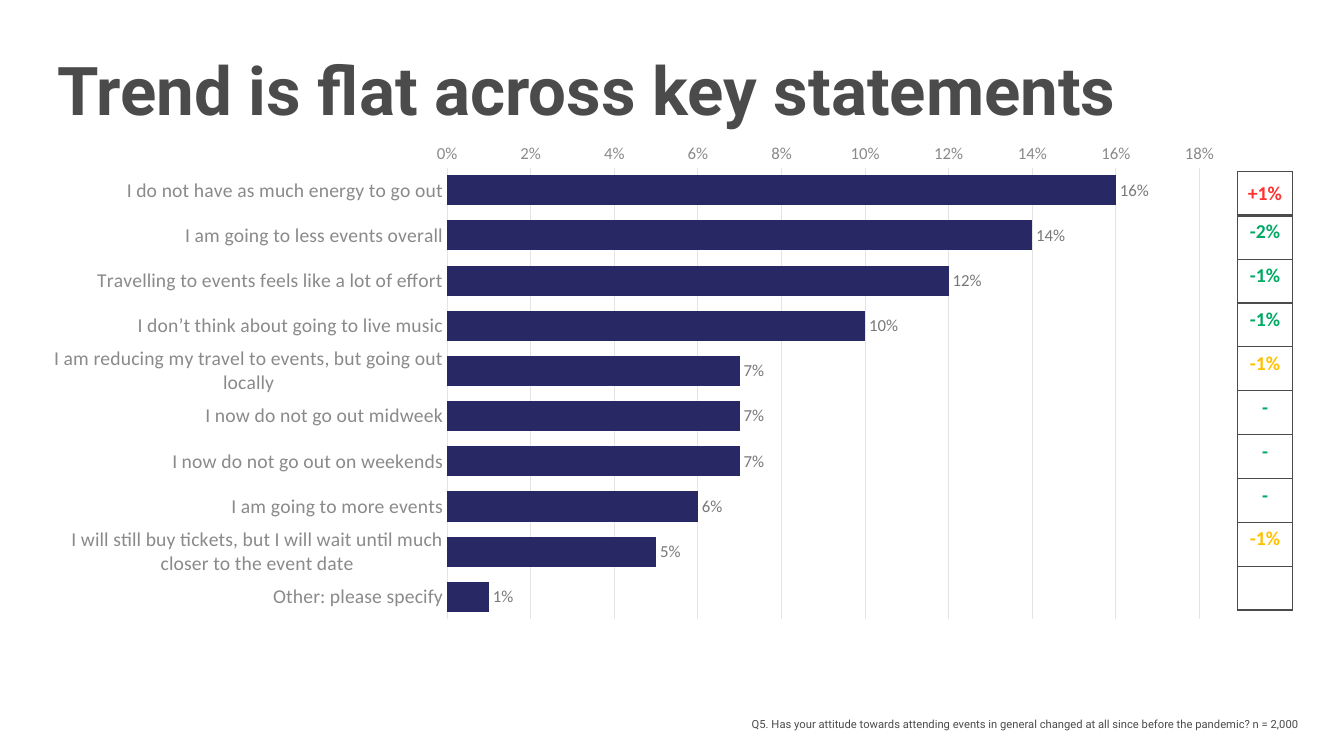
from dataclasses import dataclass

from lxml import etree
from pptx import Presentation
from pptx import util as u
from pptx.chart import data as chart_data
from pptx.dml.color import RGBColor
from pptx.enum import chart as charts, text
from pptx.oxml import ns

GREY = RGBColor(0x4B, 0x4B, 0x4B)
AXIS_GREY = RGBColor(0x8A, 0x8A, 0x8A)
LABEL_GREY = RGBColor(0x78, 0x78, 0x78)
GRID_GREY = RGBColor(0xE4, 0xE4, 0xE4)
NAVY = RGBColor(0x28, 0x28, 0x64)
RED = RGBColor(0xFF, 0x32, 0x32)
GREEN = RGBColor(0x00, 0xAA, 0x64)
AMBER = RGBColor(0xFF, 0xC0, 0x00)
WHITE = RGBColor(0xFF, 0xFF, 0xFF)


@dataclass
class Statement:
    label: str
    share: float
    change: str
    change_color: RGBColor


STATEMENTS = [
    Statement("I do not have as much energy to go out", 0.16, "+1%", RED),
    Statement("I am going to less events overall", 0.14, "-2%", GREEN),
    Statement("Travelling to events feels like a lot of effort", 0.12, "-1%", GREEN),
    Statement("I don’t think about going to live music", 0.10, "-1%", GREEN),
    Statement("I am reducing my travel to events, but going out locally", 0.07, "-1%", AMBER),
    Statement("I now do not go out midweek", 0.07, "-", GREEN),
    Statement("I now do not go out on weekends", 0.07, "-", GREEN),
    Statement("I am going to more events", 0.06, "-", GREEN),
    Statement("I will still buy tickets, but I will wait until much closer to the event date",
              0.05, "-1%", AMBER),
    Statement("Other: please specify", 0.01, "", GREY),
]


def style_font(font, size: float, color: RGBColor, name: str = "Calibri",
               bold: bool = False) -> None:
    font.size, font.name, font.bold = u.Pt(size), name, bold
    font.color.rgb = color


def write_text(frame, content: str, *, size: float, color: RGBColor, name: str = "Calibri",
               bold: bool = False, align=text.PP_ALIGN.LEFT) -> None:
    paragraph = frame.paragraphs[0]
    paragraph.alignment = align
    if content:
        run = paragraph.add_run()
        run.text = content
        style_font(run.font, size, color, name, bold)


def add_text_box(slide, left: float, top: float, width: float, height: float,
                 content: str, **text_format) -> None:
    frame = slide.shapes.add_textbox(u.Cm(left), u.Cm(top), u.Cm(width), u.Cm(height)).text_frame
    frame.word_wrap = True
    frame.auto_size = text.MSO_AUTO_SIZE.SHAPE_TO_FIT_TEXT
    write_text(frame, content, name="Roboto", color=GREY, **text_format)


def add_borders(cell, bottom_width: float) -> None:
    properties = cell._tc.get_or_add_tcPr()
    for side in "LRTB":
        width = bottom_width if side == "B" else 1
        line = etree.SubElement(properties, ns.qn(f"a:ln{side}"), w=str(u.Pt(width)))
        fill = etree.SubElement(line, ns.qn("a:solidFill"))
        etree.SubElement(fill, ns.qn("a:srgbClr"), val=str(GREY))


def add_change_table(slide) -> None:
    table = slide.shapes.add_table(len(STATEMENTS), 1, u.Cm(31.19), u.Cm(4.32),
                                   u.Cm(1.38), u.Cm(11.05)).table
    table.first_row = table.horz_banding = False
    for index, statement in enumerate(STATEMENTS):
        cell = table.cell(index, 0)
        add_borders(cell, bottom_width=2 if index == 0 else 1)
        cell.fill.solid()
        cell.fill.fore_color.rgb = WHITE
        cell.margin_left = cell.margin_right = u.Cm(0.1)
        if index == 0:
            cell.vertical_anchor = text.MSO_ANCHOR.MIDDLE
        write_text(cell.text_frame, statement.change, size=14, bold=True,
                   color=statement.change_color, align=text.PP_ALIGN.CENTER)


def set_plot_layout(chart, **fractions: float) -> None:
    plot_area = chart._chartSpace.chart.plotArea
    for old_layout in plot_area.findall(ns.qn("c:layout")):
        plot_area.remove(old_layout)
    layout = etree.Element(ns.qn("c:layout"))
    plot_area.insert(0, layout)
    manual = etree.SubElement(layout, ns.qn("c:manualLayout"))
    settings = {"layoutTarget": "inner", "xMode": "edge", "yMode": "edge", **fractions}
    for tag, value in settings.items():
        etree.SubElement(manual, ns.qn(f"c:{tag}"), val=str(value))


def style_line(line, color: RGBColor) -> None:
    line.color.rgb = color
    line.width = u.Pt(0.75)


def add_statement_chart(slide) -> None:
    data = chart_data.CategoryChartData(number_format="0%")
    data.categories = [statement.label for statement in STATEMENTS]
    data.add_series("Series 1", [statement.share for statement in STATEMENTS])
    chart = slide.shapes.add_chart(charts.XL_CHART_TYPE.BAR_CLUSTERED, u.Cm(1.19), u.Cm(3.4),
                                   u.Cm(30), u.Cm(12.5), data).chart
    chart.has_title = chart.has_legend = False
    style_font(chart.font, 12, GREY)
    set_plot_layout(chart, x=0.336, y=0.066, w=0.632, h=0.911)

    # Axes
    categories, values = chart.category_axis, chart.value_axis
    for axis, size in ((categories, 14), (values, 12)):
        axis.major_tick_mark = axis.minor_tick_mark = charts.XL_TICK_MARK.NONE
        style_font(axis.tick_labels.font, size, AXIS_GREY)
    categories.reverse_order = True
    categories.has_major_gridlines = False
    style_line(categories.format.line, GRID_GREY)
    values.minimum_scale, values.maximum_scale, values.major_unit = 0, 0.18, 0.02
    values.tick_labels.number_format = "0%"
    values.tick_labels.number_format_is_linked = False
    values.format.line.fill.background()
    values.has_major_gridlines = True
    style_line(values.major_gridlines.format.line, GRID_GREY)

    # Bars and their labels
    plot = chart.plots[0]
    plot.gap_width = 50
    plot.vary_by_categories = False
    bars = plot.series[0]
    bars.format.fill.solid()
    bars.format.fill.fore_color.rgb = NAVY
    labels = bars.data_labels
    labels.show_value = True
    labels.position = charts.XL_LABEL_POSITION.OUTSIDE_END
    labels.number_format = "0%"
    labels.number_format_is_linked = False
    style_font(labels.font, 12, LABEL_GREY)


def main() -> None:
    presentation = Presentation()
    presentation.slide_width, presentation.slide_height = u.Cm(33.87), u.Cm(19.05)
    slide = presentation.slides.add_slide(presentation.slide_layouts[6])

    # Title, changes, source note and chart
    add_text_box(slide, 1.19, 1.09, 32.18, 2.31, "Trend is flat across key statements",
                 size=48, bold=True)
    add_change_table(slide)
    add_text_box(slide, 9.68, 17.96, 23.32, 0.6,
                 "Q5. Has your attitude towards attending events in general changed at all "
                 "since before the pandemic? n = 2,000", size=8, align=text.PP_ALIGN.RIGHT)
    add_statement_chart(slide)
    presentation.save("out.pptx")


if __name__ == "__main__":
    main()
